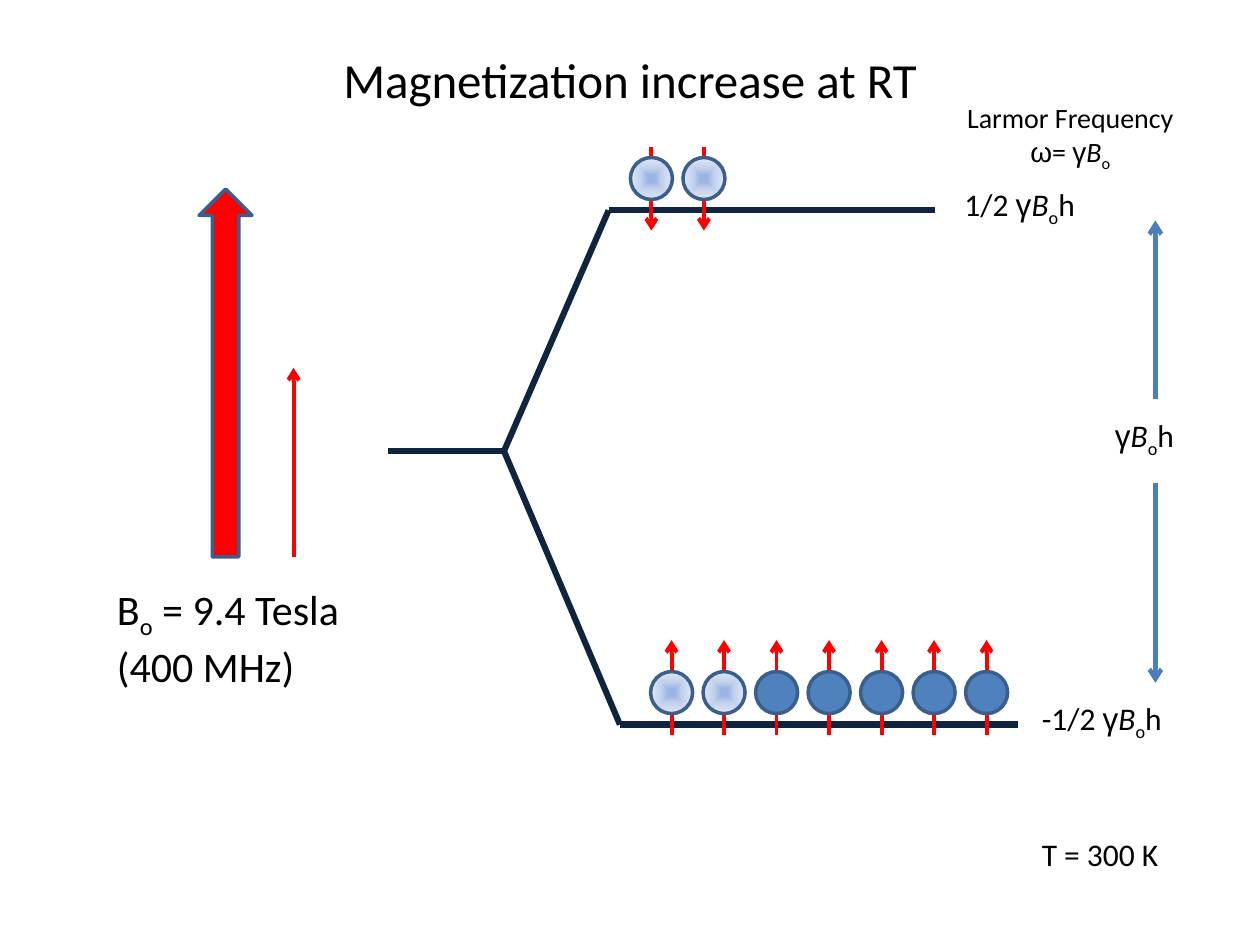
from pptx import Presentation
from pptx.dml.color import RGBColor
from pptx.enum.shapes import MSO_CONNECTOR, MSO_SHAPE
from pptx.enum.text import MSO_ANCHOR, MSO_AUTO_SIZE, PP_ALIGN
from pptx.oxml import parse_xml
from pptx.oxml.ns import nsdecls
from pptx.util import Inches, Pt

BLACK = RGBColor(0x00, 0x00, 0x00)
RED = RGBColor(0xFF, 0x00, 0x00)
NAVY = RGBColor(0x0F, 0x24, 0x3E)
BLUE = RGBColor(0x4F, 0x81, 0xBD)
ARROW_BLUE = RGBColor(0x4B, 0x7E, 0xBC)
OUTLINE = RGBColor(0x3A, 0x5F, 0x8C)
GLOW_STOPS = (
    (16, RGBColor(0x9A, 0xB5, 0xE4)),
    (50, RGBColor(0xC2, 0xD1, 0xED)),
    (100, RGBColor(0xE1, 0xE8, 0xF5)),
)

SPIN_PITCH = 5 / 12
SPIN_DIAMETER = 1 / 3

GAMMA = ("γ", "greek")
FIELD = (("B", "italic"), ("o", "subscript"))
ENERGY = (GAMMA, *FIELD, ("h", ""))


def add_text(slide, box, paragraphs, size=18, align=PP_ALIGN.LEFT,
             anchor=MSO_ANCHOR.TOP, wrap=True):
    """Each paragraph is a sequence of (text, style) runs."""
    text_box = slide.shapes.add_textbox(*map(Inches, box))
    frame = text_box.text_frame
    frame.word_wrap = wrap
    frame.auto_size = MSO_AUTO_SIZE.NONE
    frame.vertical_anchor = anchor
    for index, runs in enumerate(paragraphs):
        paragraph = frame.add_paragraph() if index else frame.paragraphs[0]
        paragraph.alignment = align
        for text, style in runs:
            run = paragraph.add_run()
            run.text = text
            font = run.font
            font.size = Pt(size)
            font.name = "Arial" if style == "greek" else "Calibri"
            font.color.rgb = BLACK
            if style == "italic":
                font.italic = True
            if style == "subscript":
                font._element.set("baseline", "-25000")


def add_line(slide, start, end, color, width, arrow=False):
    connector = slide.shapes.add_connector(
        MSO_CONNECTOR.STRAIGHT, *map(Inches, (*start, *end)))
    connector.line.color.rgb = color
    connector.line.width = Pt(width)
    if arrow:
        connector.line._get_or_add_ln().append(
            parse_xml(f'<a:tailEnd {nsdecls("a")} type="arrow"/>'))
    connector._element.spPr.append(
        parse_xml(f'<a:effectLst {nsdecls("a")}/>'))


def add_outlined_shape(slide, kind, box, fill):
    shape = slide.shapes.add_shape(kind, *map(Inches, box))
    shape.shadow.inherit = False
    shape.fill.solid()
    shape.fill.fore_color.rgb = fill
    shape.line.color.rgb = OUTLINE
    shape.line.width = Pt(2)
    return shape


def apply_glow(shape):
    """Replace the solid fill with a gradient spreading from the centre."""
    stops = "".join(
        f'<a:gs pos="{position * 1000}"><a:srgbClr val="{color}"/></a:gs>'
        for position, color in GLOW_STOPS)
    gradient = parse_xml(
        f'<a:gradFill {nsdecls("a")} rotWithShape="1"><a:gsLst>{stops}</a:gsLst>'
        '<a:path path="shape"><a:fillToRect l="50000" t="50000" r="50000" '
        'b="50000"/></a:path></a:gradFill>')
    properties = shape._element.spPr
    properties.replace(properties.find(
        "{http://schemas.openxmlformats.org/drawingml/2006/main}solidFill"), gradient)


def add_spins(slide, first_x, circle_top, tail_y, head_y, count, glowing):
    """Draw a row of spins, of which the first few are glowing."""
    for index in range(count):
        x = first_x + index * SPIN_PITCH
        add_line(slide, (x, tail_y), (x, head_y), RED, 2.25, arrow=True)
        circle = add_outlined_shape(
            slide, MSO_SHAPE.OVAL,
            (x - SPIN_DIAMETER / 2, circle_top, SPIN_DIAMETER, SPIN_DIAMETER), BLUE)
        if index < glowing:
            apply_glow(circle)


def add_magnetic_field(slide, left, top):
    add_outlined_shape(slide, MSO_SHAPE.UP_ARROW,
                       (left + 0.75, top, 0.42, 2.92), RED)
    add_line(slide, (left + 1.5, top + 2.92), (left + 1.5, top + 1.42),
             RED, 2.25, arrow=True)
    add_text(slide, (left, top + 3.08, 2.17, 0.91),
             [[("B", ""), ("o", "subscript"), (" = 9.4 Tesla (400 MHz)", "")]],
             size=24)


def add_energy_levels(slide, left, top):
    fork = (left + 0.92, top + 1.91)
    upper = (left + 1.75, top)
    lower = (left + 1.84, top + 4.08)
    for start, end in (
        ((left, fork[1]), fork),
        (upper, (left + 4.34, top)),
        (lower, (left + 5, lower[1])),
        (fork, upper),
        (fork, lower),
    ):
        add_line(slide, start, end, NAVY, 3.5)
    add_spins(slide, left + 2.09, top - 0.42, top - 0.5, top + 0.16,
              count=2, glowing=2)
    add_spins(slide, left + 2.25, lower[1] - 0.42, lower[1] + 0.08,
              lower[1] - 0.67, count=7, glowing=2)


def add_energy_labels(slide, left, top):
    add_text(slide, (left, top, 2.33, 0.64),
             [[("Larmor Frequency", "")],
              [("ω", "greek"), ("= ", ""), GAMMA, *FIELD]],
             size=16, align=PP_ALIGN.CENTER)
    for x, y, prefix in ((0.17, 0.67, [(" 1/2 ", "")]),
                         (1.42, 2.5, []),
                         (0.84, 4.75, [("-1/2 ", "")])):
        add_text(slide, (left + x, top + y, 1.25, 0.4), [[*prefix, *ENERGY]])
    arrow_x = left + 1.84
    for start_y, end_y in ((2.42, 1), (3.08, 4.67)):
        add_line(slide, (arrow_x, top + start_y), (arrow_x, top + end_y),
                 ARROW_BLUE, 2.5, arrow=True)
    add_text(slide, (left + 0.84, top + 5.83, 1.14, 0.4),
             [[("T = 300 K", "")]], wrap=False)


def main():
    presentation = Presentation()
    presentation.slide_width = Inches(10)
    presentation.slide_height = Inches(7.5)
    slide = presentation.slides.add_slide(presentation.slide_layouts[6])
    add_text(slide, (0.5, 0, 9, 1.25), [[("Magnetization increase at RT", "")]],
             size=28, align=PP_ALIGN.CENTER, anchor=MSO_ANCHOR.MIDDLE)
    add_magnetic_field(slide, 0.83, 1.5)
    add_energy_levels(slide, 3.08, 1.67)
    add_energy_labels(slide, 7.33, 0.75)
    presentation.save("out.pptx")


if __name__ == "__main__":
    main()
